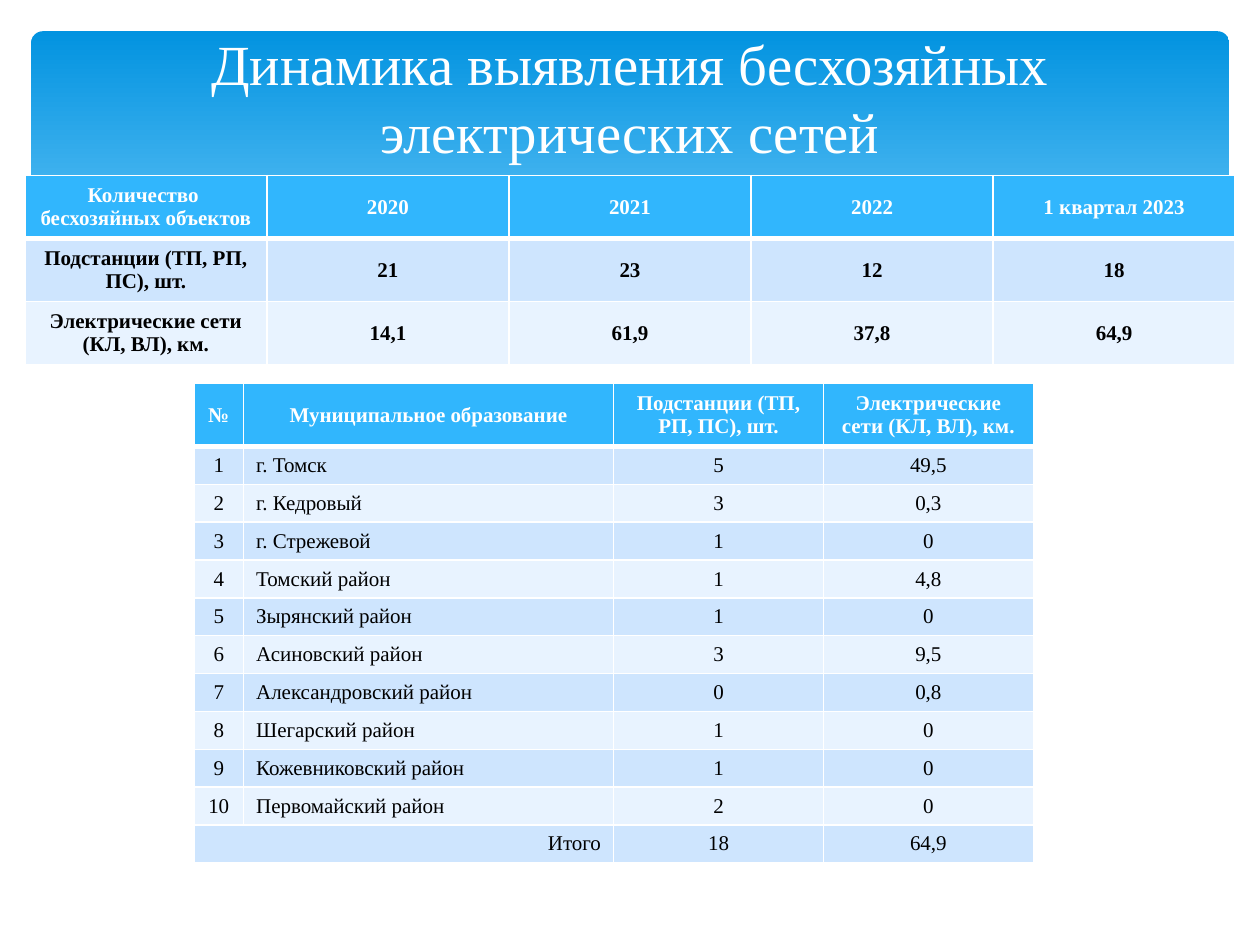
from lxml import etree
from pptx import Presentation
from pptx import util as u
from pptx.dml.color import RGBColor
from pptx.enum import shapes, text
from pptx.oxml.ns import qn

FONT = "Times New Roman"
WHITE, BLACK, BLUE = "FFFFFF", "000000", "31B6FD"
BANDS = ("CEE5FE", "E8F3FF")
ALIGN = {"l": text.PP_ALIGN.LEFT, "c": text.PP_ALIGN.CENTER, "r": text.PP_ALIGN.RIGHT}

TITLE = "Динамика выявления бесхозяйных электрических сетей"
YEARS = [
    ("Количество  бесхозяйных объектов", "2020", "2021", "2022", "1 квартал 2023"),
    ("Подстанции (ТП, РП, ПС), шт.", "21", "23", "12", "18"),
    ("Электрические сети (КЛ, ВЛ), км.", "14,1", "61,9", "37,8", "64,9"),
]
HEAD = ("№", "Муниципальное образование",
        "Подстанции (ТП, РП, ПС), шт.", "Электрические сети (КЛ, ВЛ), км.")
AREAS = [
    ("г. Томск", "5", "49,5"),
    ("г. Кедровый", "3", "0,3"),
    ("г. Стрежевой", "1", "0"),
    ("Томский район", "1", "4,8"),
    ("Зырянский район", "1", "0"),
    ("Асиновский район", "3", "9,5"),
    ("Александровский район", "0", "0,8"),
    ("Шегарский район", "1", "0"),
    ("Кожевниковский район", "1", "0"),
    ("Первомайский район", "2", "0"),
]
TOTAL = ("Итого", "", "18", "64,9")

# Upper edge of the white wave under the banner, in cm, from right to left
WAVE = [(24.82, 6.25), (23.11, 6.8), (20.9, 7.04), (18.44, 6.92), (15.9, 6.55),
        (13.44, 6.07), (11.35, 5.59), (8.64, 5), (6.35, 4.72), (4.5, 4.67),
        (3.02, 4.75), (1.7, 5), (0.58, 5.41)]
FLOOR = 8.36


def rgb(code):
    return RGBColor.from_string(code)


def style(para, align, **font):
    para.alignment = ALIGN[align]
    run = para.runs[0]
    run.font.color.rgb = rgb(font.pop("color"))
    for key, val in {"name": FONT, **font}.items():
        setattr(run.font, key, val)


def edge(cell, **widths):
    """Draw white cell borders; widths are points by side."""
    props = cell._tc.get_or_add_tcPr()
    for spot, (side, width) in enumerate(widths.items()):
        line = etree.Element(qn("a:ln" + side), w=str(u.Pt(width)))
        fill = etree.SubElement(line, qn("a:solidFill"))
        etree.SubElement(fill, qn("a:srgbClr"), val=WHITE)
        props.insert(spot, line)


def banner(slide):
    box = slide.shapes.add_shape(shapes.MSO_SHAPE.ROUNDED_RECTANGLE,
                                 *map(u.Cm, (0.63, 0.63, 24.15, 6.86)))
    box.adjustments[0] = 0.034
    box.shadow.inherit = False
    box.line.fill.background()
    box.fill.gradient()
    box.fill.gradient_angle = 270
    for stop, (code, pos) in zip(box.fill.gradient_stops, (("0293E0", 0), ("83D3FE", 0.9))):
        stop.color.rgb = rgb(code)
        stop.position = pos

    edges = WAVE + [(WAVE[-1][0], FLOOR), (WAVE[0][0], FLOOR)]
    points = [(u.Cm(x), u.Cm(y)) for x, y in edges]
    path = slide.shapes.build_freeform(*points[0])
    path.add_line_segments(points[1:], close=True)
    wave = path.convert_to_shape()
    wave.shadow.inherit = False
    wave.fill.solid()
    wave.fill.fore_color.rgb = rgb(WHITE)
    wave.line.fill.background()


def title(slide):
    box = slide.shapes.add_textbox(*map(u.Cm, (1.27, 0.94, 22.86, 3.48)))
    frame = box.text_frame
    for key, val in {"word_wrap": True, "margin_bottom": u.Cm(1.57),
                     "vertical_anchor": text.MSO_ANCHOR.MIDDLE}.items():
        setattr(frame, key, val)
    frame.text = TITLE
    style(frame.paragraphs[0], "c", size=u.Pt(32.4), color=WHITE)


def grid(slide, left, top, cols, high, rows, aligns, bold):
    """Add a banded table; high holds the header height and the row height."""
    heights = [high[0]] + [high[1]] * (len(rows) - 1)
    spot = map(u.Cm, (left, top, sum(cols), sum(heights)))
    table = slide.shapes.add_table(len(rows), len(cols), *spot).table
    for col, width in zip(table.columns, cols):
        col.width = u.Cm(width)
    for r, (row, height) in enumerate(zip(rows, heights)):
        table.rows[r].height = u.Cm(height)
        for c, words in enumerate(row):
            cell = table.cell(r, c)
            cell.vertical_anchor = text.MSO_ANCHOR.MIDDLE
            cell.fill.solid()
            cell.fill.fore_color.rgb = rgb(BANDS[(r - 1) % 2] if r else BLUE)
            edge(cell, L=1, R=1, T=3 if r == 1 else 1, B=1 if r else 3)
            if words:
                cell.text = words
                style(cell.text_frame.paragraphs[0], aligns[c] if r else "c",
                      size=u.Pt(12), bold=bold or r == 0, color=BLACK if r else WHITE)
    return table


def main():
    deck = Presentation()
    deck.slide_width, deck.slide_height = u.Cm(25.4), u.Cm(19.05)
    slide = deck.slides.add_slide(deck.slide_layouts[6])
    banner(slide)
    title(slide)
    grid(slide, 0.5, 3.54, [4.88] * 5, (1.18, 1.18), YEARS, "ccccc", True)

    rows = [HEAD] + [(str(n), *area) for n, area in enumerate(AREAS, 1)] + [TOTAL]
    table = grid(slide, 3.91, 7.73, [1, 7.46, 4.23, 4.23], (1.18, 0.72), rows, "clcc", False)
    last = len(rows) - 1
    table.cell(last, 0).merge(table.cell(last, 1))
    table.cell(last, 0).text_frame.paragraphs[0].alignment = ALIGN["r"]
    deck.save("out.pptx")


if __name__ == "__main__":
    main()
